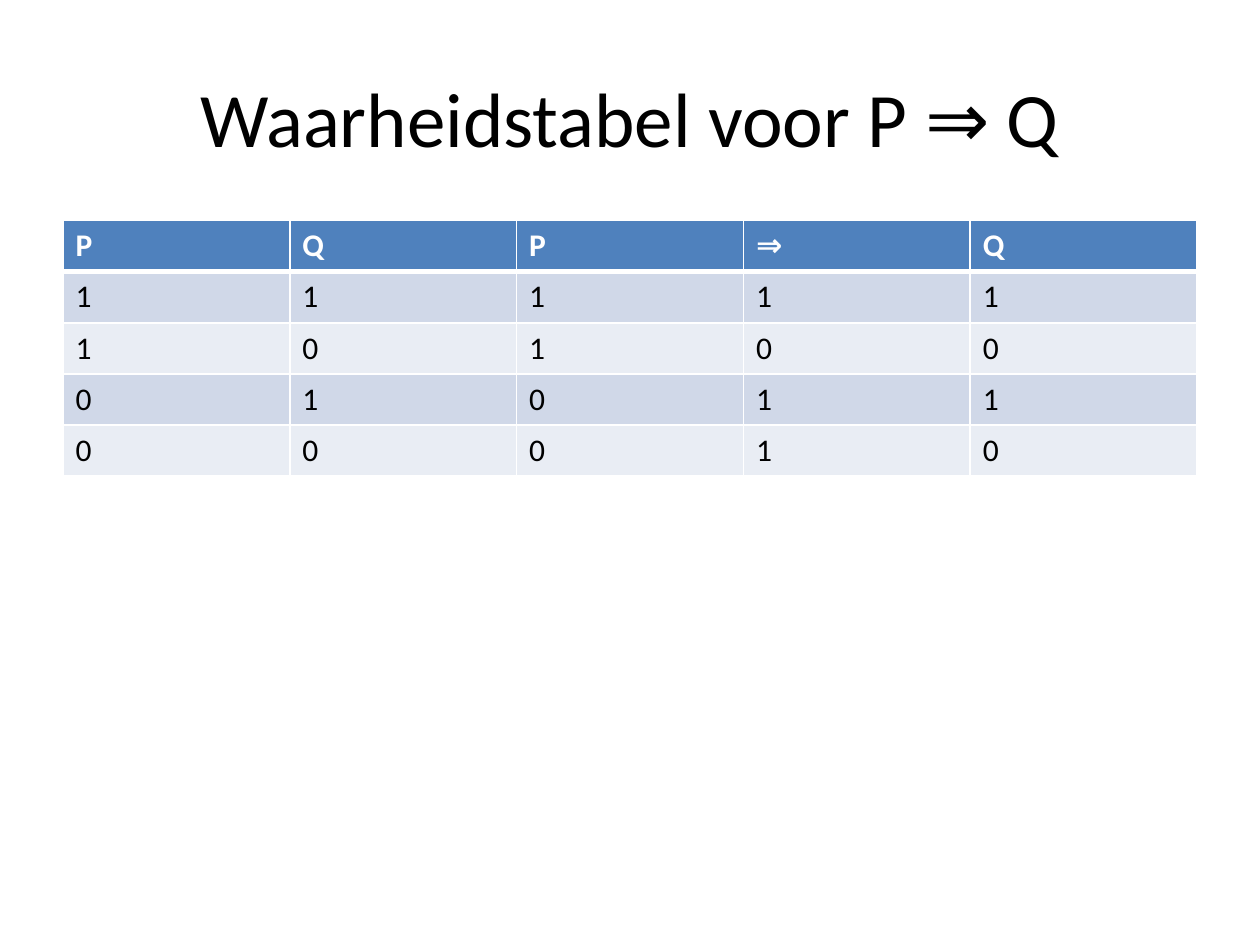
from itertools import product

from lxml.etree import SubElement
from pptx import Presentation
from pptx.dml.color import RGBColor
from pptx.enum.text import MSO_ANCHOR, PP_ALIGN
from pptx.oxml.ns import qn
from pptx.util import Inches, Pt

COLORS = {
    "black": "000000",
    "white": "FFFFFF",
    "header": "4F81BD",
    "odd": "D0D8E8",
    "even": "E9EDF4",
}
FONT = "Calibri"
GRID_COLUMNS, GRID_ROWS = 20, 30


def write(frame, text, size=18, color="black", bold=False, align=PP_ALIGN.LEFT):
    para = frame.paragraphs[0]
    para.alignment = align
    span = para.add_run()
    span.text = text
    span.font.name = FONT
    span.font.size = Pt(size)
    span.font.bold = bold
    span.font.color.rgb = RGBColor.from_string(COLORS[color])


def set_borders(cell, color, **widths):
    """Draw cell borders; widths are points for the sides L, R, T and B, in that order."""
    properties = cell._tc.get_or_add_tcPr()
    for side, width in widths.items():
        line = SubElement(properties, qn(f"a:ln{side}"), w=str(Pt(width)))
        fill = SubElement(line, qn("a:solidFill"))
        SubElement(fill, qn("a:srgbClr"), val=COLORS[color])


class SlideBuilder:
    def __init__(self, deck):
        self.column = deck.slide_width / GRID_COLUMNS
        self.row = deck.slide_height / GRID_ROWS
        self.page = deck.slides.add_slide(deck.slide_layouts[5])

    def place(self, left, top, width, height):
        """Turn grid columns and rows into slide lengths."""
        return (int(left * self.column), int(top * self.row),
                int(width * self.column), int(height * self.row))

    def title(self, text, *area):
        box = self.page.shapes.title
        box.left, box.top, box.width, box.height = self.place(*area)
        box.text_frame.vertical_anchor = MSO_ANCHOR.MIDDLE
        write(box.text_frame, text, size=44, align=PP_ALIGN.CENTER)

    def table(self, rows, *area):
        """Add a banded table whose first row is the header."""
        table = self.page.shapes.add_table(
            len(rows), len(rows[0]), *self.place(*area)).table
        for r, values in enumerate(rows):
            is_header = r == 0
            band = "header" if is_header else "odd" if r % 2 else "even"
            for c, value in enumerate(values):
                cell = table.cell(r, c)
                set_borders(cell, "white", L=1, R=1,
                            T=3 if r == 1 else 1, B=3 if is_header else 1)
                cell.fill.solid()
                cell.fill.fore_color.rgb = RGBColor.from_string(COLORS[band])
                write(cell.text_frame, str(value), bold=is_header,
                      color="white" if is_header else "black")


def main():
    deck = Presentation()
    deck.slide_width, deck.slide_height = Inches(10), Inches(7.5)
    slide = SlideBuilder(deck)
    slide.title("Waarheidstabel voor P ⇒ Q", 1, 1.2, 18, 5)
    truth_rows = [(p, q, p, int(not p or q), q) for p, q in product((1, 0), repeat=2)]
    slide.table([("P", "Q", "P", "⇒", "Q"), *truth_rows], 1, 7, 18, 8.12)
    deck.save("out.pptx")


if __name__ == "__main__":
    main()
